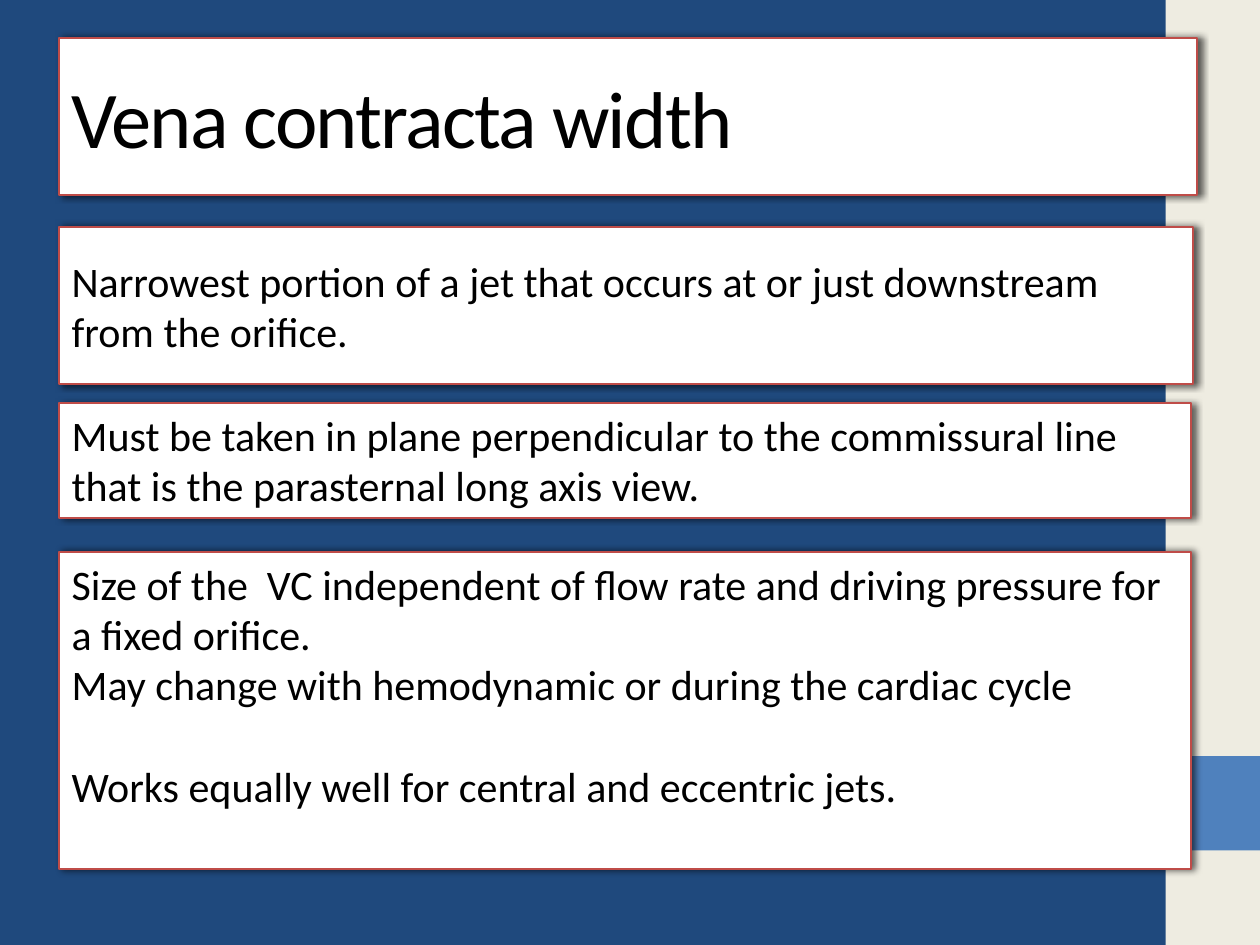
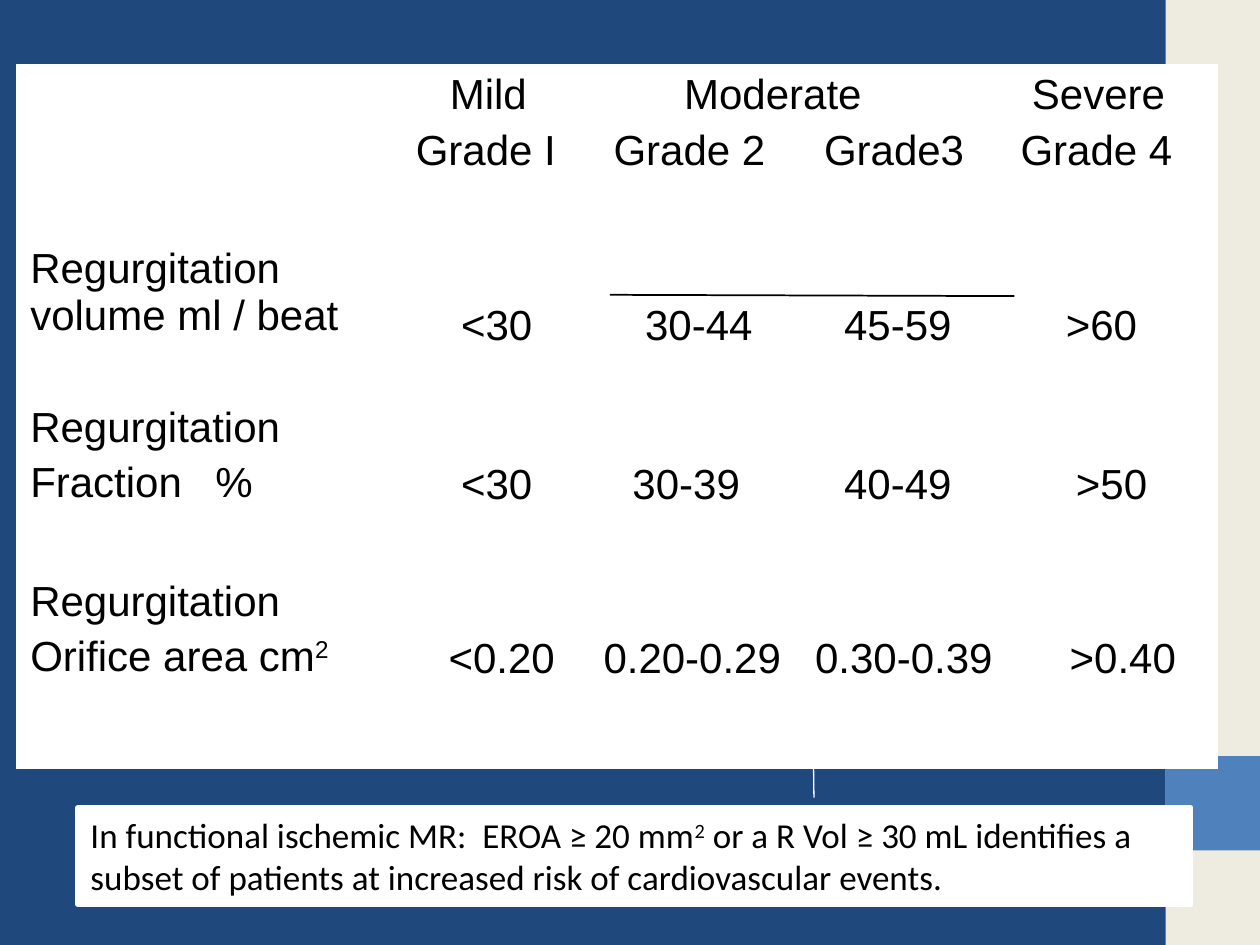
from dataclasses import dataclass
from typing import Any

from lxml.etree import SubElement
from pptx import Presentation
from pptx.dml.color import RGBColor
from pptx.enum.shapes import MSO_CONNECTOR, MSO_SHAPE
from pptx.enum.text import MSO_ANCHOR, MSO_AUTO_SIZE, PP_ALIGN
from pptx.oxml.ns import qn
from pptx.util import Inches, Pt

COLORS = {
    "navy": "1F497D",
    "cream": "EEECE1",
    "blue": "4F81BD",
    "red": "BF4C48",
    "white": "FFFFFF",
    "black": "000000",
}
TITLE_FONT = {"name": "Calibri", "size": Pt(46)}
BODY_FONT = {"name": "Calibri", "size": Pt(24)}
NOTE_FONT = {"name": "Calibri", "size": Pt(20)}
TABLE_FONT = {"name": "Arial", "size": Pt(24)}
TITLE_ONLY, BLANK = 5, 6
CELL_MARGIN = 0.1
VALUE_TOP = 0.5
PARAGRAPH_GAP = Pt(4.8)


@dataclass(frozen=True)
class Band:
    top: float
    height: float
    color: str


@dataclass(frozen=True)
class Line:
    """One paragraph; ^ marks surround a superscript."""
    text: str
    indent: float = 0
    gap: Any = None


@dataclass(frozen=True)
class Card:
    left: float
    top: float
    width: float
    height: float
    lines: tuple[Line, ...]
    anchor: Any = MSO_ANCHOR.TOP


@dataclass(frozen=True)
class Grade:
    """One table cell: its lines, extra left inset, top margin and tab stop."""
    lines: tuple[Line, ...] = ()
    inset: float = 0
    top: float = 0.05
    tab: float = 0


@dataclass(frozen=True)
class Rule:
    start: tuple[float, float]
    end: tuple[float, float]
    color: str
    weight: float


def value(text: str, inset: float, tab: float = 0) -> Grade:
    return Grade((Line(text),), inset, VALUE_TOP, tab)


BANDS = (Band(0, 7.5, "cream"), Band(6, 0.75, "blue"))

TITLE = Card(0.47, 0.3, 9.03, 1.25, (Line("Vena contracta width"),), MSO_ANCHOR.MIDDLE)
FACTS = (
    Card(0.47, 1.8, 9, 1.25, (
        Line("Narrowest portion of a jet that occurs at or just downstream from the orifice."),
    ), MSO_ANCHOR.MIDDLE),
    Card(0.47, 3.2, 8.98, 0.91, (
        Line("Must be taken in plane perpendicular to the commissural line "
             "that is the parasternal long axis view."),
    )),
    Card(0.47, 4.38, 8.98, 2.52, (
        Line("Size of the  VC independent of flow rate and driving pressure for a fixed orifice."),
        Line("May change with hemodynamic or during the cardiac cycle"),
        Line("Works equally well for central and eccentric jets.", gap=Pt(29)),
    )),
)

COLUMN_WIDTHS = (3.06, 1.49, 3.31, 1.65)
ROW_HEIGHTS = (1.38, 1.26, 1.38, 1.55)
GRADES = (
    (Grade(),
     Grade((Line("Mild", 0.27), Line("Grade I"))),
     Grade((Line("Moderate", 0.56), Line("Grade 2\tGrade3")), 0.08, tab=1.67),
     Grade((Line("Severe", 0.09), Line("Grade 4")))),
    (Grade((Line("Regurgitation volume ml / beat"),)),
     value("<30", 0.36), value("30-44\t45-59", 0.33, 1.58), value(">60", 0.36)),
    (Grade((Line("Regurgitation"), Line("Fraction\t%")), tab=1.47),
     value("<30", 0.36), value("30-39\t40-49", 0.23, 1.68), value(">50", 0.44)),
    (Grade((Line("Regurgitation"), Line("Orifice area cm^2^"))),
     value("<0.20", 0.26), value("0.20-0.29\t0.30-0.39", 0, 1.68), value(">0.40", 0.39)),
)
NOTE = Card(0.62, 6.41, 8.83, 0.77, (
    Line("In functional ischemic MR:  EROA ≥ 20 mm^2^ or a R Vol ≥ 30 mL identifies "
         "a subset of patients at increased risk of cardiovascular events."),
))
GRADE_DIVIDER = Rule((6.41, 2.34), (6.46, 6.33), "white", 0.75)
MODERATE_RULE = Rule((4.84, 2.34), (8.05, 2.35), "black", 1)


def rgb(color: str) -> RGBColor:
    return RGBColor.from_string(COLORS[color])


def apply(target: Any, formats: dict[str, Any]) -> None:
    for name, setting in formats.items():
        setattr(target, name, setting)


def paint(fill: Any, color: str) -> None:
    fill.solid()
    fill.fore_color.rgb = rgb(color)


def write(frame: Any, lines: tuple[Line, ...], font: dict[str, Any],
          gap: Any = Pt(0), tab: float = 0, spacing: int = 0) -> None:
    for number, line in enumerate(lines):
        paragraph = frame.add_paragraph() if number else frame.paragraphs[0]
        paragraph.alignment = PP_ALIGN.LEFT
        if number:
            paragraph.space_before = line.gap or gap
        properties = paragraph._p.get_or_add_pPr()
        if line.indent:
            properties.set("marL", str(Inches(line.indent)))
            properties.set("indent", "0")
        if "\t" in line.text:
            stops = SubElement(properties, qn("a:tabLst"))
            SubElement(stops, qn("a:tab"), pos=str(Inches(tab)), algn="l")
        for part, text in enumerate(line.text.split("^")):
            if not text:
                continue
            run = paragraph.add_run()
            run.text = text
            apply(run.font, font)
            run.font.color.rgb = rgb("black")
            if part % 2:
                run._r.get_or_add_rPr().set("baseline", "30000")
            if spacing:
                run._r.get_or_add_rPr().set("spc", str(spacing))


def cast_shadow(shape: Any) -> None:
    effects = shape._element.spPr.find(qn("a:effectLst"))
    shadow = SubElement(effects, qn("a:outerShdw"), blurRad=str(Pt(4)),
                        dist=str(Pt(2)), dir="0", algn="ctr", rotWithShape="0")
    color = SubElement(shadow, qn("a:srgbClr"), val=COLORS["black"])
    SubElement(color, qn("a:alpha"), val="60000")


def fill_card(shape: Any, card: Card, font: dict[str, Any], border: str = "red",
              weight: float = 1, shadow: bool = True, spacing: int = 0) -> None:
    apply(shape, {"left": Inches(card.left), "top": Inches(card.top),
                  "width": Inches(card.width), "height": Inches(card.height)})
    paint(shape.fill, "white")
    shape.line.color.rgb = rgb(border)
    shape.line.width = Pt(weight)
    shape.shadow.inherit = False
    if shadow:
        cast_shadow(shape)
    apply(shape.text_frame, {"word_wrap": True, "auto_size": MSO_AUTO_SIZE.NONE,
                             "vertical_anchor": card.anchor})
    write(shape.text_frame, card.lines, font, spacing=spacing)


def add_box(slide: Any, left: float, top: float, width: float, height: float) -> Any:
    return slide.shapes.add_shape(MSO_SHAPE.RECTANGLE, Inches(left), Inches(top),
                                  Inches(width), Inches(height))


def add_card(slide: Any, card: Card, font: dict[str, Any], **look: Any) -> None:
    box = add_box(slide, card.left, card.top, card.width, card.height)
    fill_card(box, card, font, **look)


def add_rule(slide: Any, rule: Rule) -> None:
    ends = [Inches(length) for length in (*rule.start, *rule.end)]
    connector = slide.shapes.add_connector(MSO_CONNECTOR.STRAIGHT, *ends)
    connector.line.color.rgb = rgb(rule.color)
    connector.line.width = Pt(rule.weight)
    SubElement(connector._element.spPr, qn("a:effectLst"))


def set_borders(cell: Any, weights: dict[str, float]) -> None:
    properties = cell._tc.get_or_add_tcPr()
    for position, (side, weight) in enumerate(weights.items()):
        edge = SubElement(properties, qn(f"a:ln{side}"), w=str(Pt(weight)))
        SubElement(SubElement(edge, qn("a:solidFill")), qn("a:srgbClr"), val=COLORS["white"])
        properties.insert(position, edge)


def add_grades(slide: Any) -> None:
    rows, columns = len(ROW_HEIGHTS), len(COLUMN_WIDTHS)
    table = slide.shapes.add_table(
        rows, columns, Inches(0.14), Inches(0.52),
        Inches(sum(COLUMN_WIDTHS)), Inches(sum(ROW_HEIGHTS))).table
    apply(table, {"first_row": False, "horz_banding": False})
    for column, width in zip(table.columns, COLUMN_WIDTHS):
        column.width = Inches(width)
    for r, (height, grades) in enumerate(zip(ROW_HEIGHTS, GRADES)):
        table.rows[r].height = Inches(height)
        for c, grade in enumerate(grades):
            cell = table.cell(r, c)
            apply(cell, {"margin_left": Inches(CELL_MARGIN + grade.inset),
                         "margin_right": Inches(0.05), "margin_top": Inches(grade.top),
                         "vertical_anchor": MSO_ANCHOR.TOP})
            paint(cell.fill, "white")
            outer = {"L": c == 0, "R": c == columns - 1, "T": r == 0, "B": r == rows - 1}
            set_borders(cell, {side: 2.25 if edge else 1 for side, edge in outer.items()})
            write(cell.text_frame, grade.lines, TABLE_FONT, PARAGRAPH_GAP, grade.tab)


def style_master(deck: Any, slide: Any) -> None:
    """Give the master its background and the bands at the right edge."""
    master = deck.slide_master
    paint(master.background.fill, "navy")
    for number, band in enumerate(BANDS):
        strip = add_box(slide, 9.25, band.top, 0.75, band.height)
        paint(strip.fill, band.color)
        strip.line.fill.background()
        strip.shadow.inherit = False
        strip._element.nvSpPr.cNvPr.set("id", str(101 + number))
        master.shapes._spTree.insert(2 + number, strip._element)


def main() -> None:
    deck = Presentation()
    apply(deck, {"slide_width": Inches(10), "slide_height": Inches(7.5)})

    # Vena contracta width
    contracta = deck.slides.add_slide(deck.slide_layouts[TITLE_ONLY])
    style_master(deck, contracta)
    fill_card(contracta.shapes.title, TITLE, TITLE_FONT, spacing=-100)
    for fact in FACTS:
        add_card(contracta, fact, BODY_FONT)

    # Regurgitation grades
    regurgitation = deck.slides.add_slide(deck.slide_layouts[BLANK])
    add_grades(regurgitation)
    add_rule(regurgitation, GRADE_DIVIDER)
    add_card(regurgitation, NOTE, NOTE_FONT, border="white", weight=3, shadow=False)
    add_rule(regurgitation, MODERATE_RULE)

    deck.save("out.pptx")


if __name__ == "__main__":
    main()
